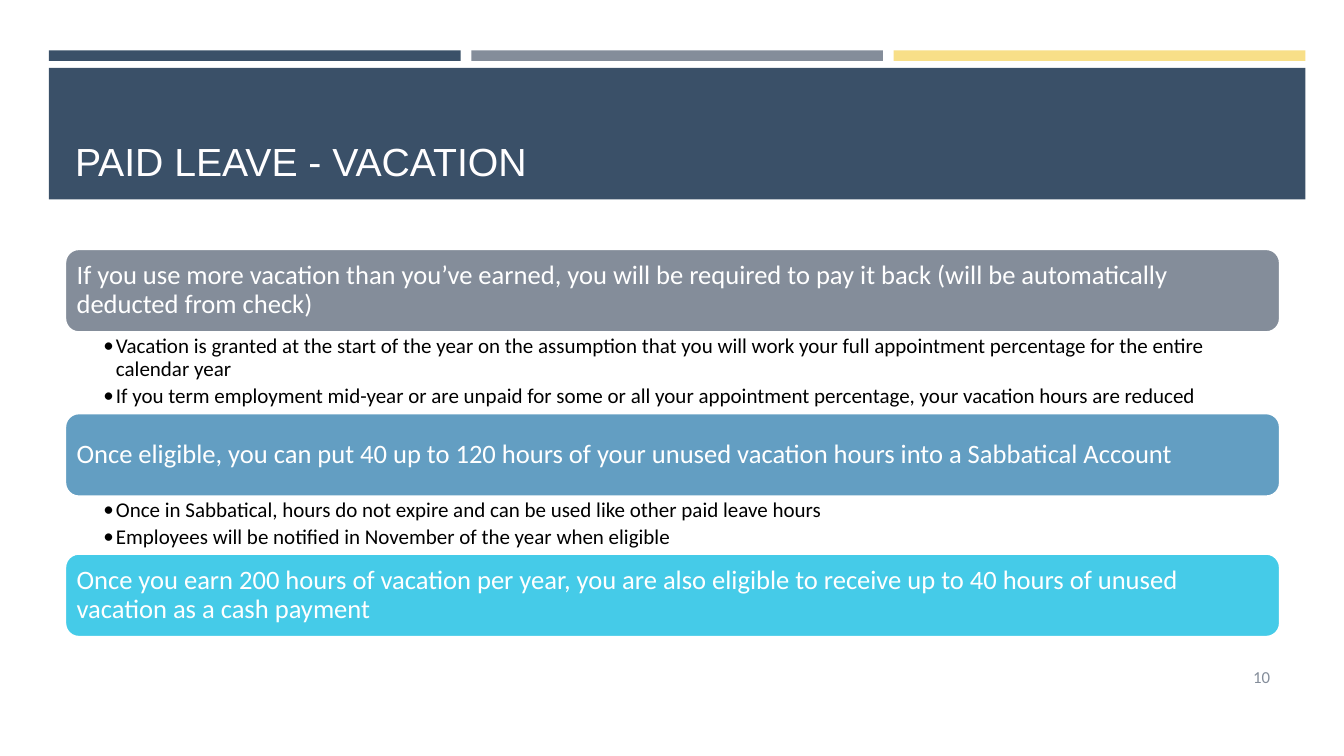
"""Build the paid leave vacation slide."""
from pptx import Presentation
from pptx.dml.color import RGBColor
from pptx.enum.shapes import MSO_SHAPE as SHAPE
from pptx.enum.text import MSO_ANCHOR as ANCHOR, MSO_AUTO_SIZE as AUTO, PP_ALIGN as ALIGN
from pptx.oxml.ns import qn
from pptx.util import Pt
from lxml.etree import SubElement


def rgb(color):
    return RGBColor.from_string(color)


def write(sp, *texts, size, color, font="Calibri", align=ALIGN.LEFT, anchor=ANCHOR.MIDDLE,
          insets=(7.2, 3.6, 7.2, 3.6), spacing=1.0, after=0, bullet=None):
    tf = sp.text_frame
    tf.word_wrap = True
    tf.auto_size = AUTO.NONE
    tf.vertical_anchor = anchor
    tf.margin_left, tf.margin_top, tf.margin_right, tf.margin_bottom = map(Pt, insets)
    for i, text in enumerate(texts):
        p = tf.add_paragraph() if i else tf.paragraphs[0]
        p.alignment = align
        p.line_spacing = spacing
        p.space_before = Pt(0)
        p.space_after = Pt(after)
        if bullet:
            pPr = p._p.get_or_add_pPr()
            pPr.set("marL", str(Pt(9)))
            pPr.set("indent", str(Pt(-9)))
            SubElement(pPr, qn("a:buFont")).set("typeface", "Calibri")
            SubElement(pPr, qn("a:buChar")).set("char", bullet)
        r = p.add_run()
        r.text = text
        r.font.name = font
        r.font.size = Pt(size)
        r.font.color.rgb = rgb(color)


prs = Presentation()
prs.slide_width, prs.slide_height = Pt(960), Pt(540)
s = prs.slides.add_slide(prs.slide_layouts.get_by_name("Two Content"))
title, *bodies = s.placeholders

bars = [(35 + 301.7 * i, 36, 294, 7.5, color)
        for i, color in enumerate(["3A5068", "848D9A", "F8DF88"])]
for x, y, w, h, color in bars + [(35, 48.5, 897.5, 94, "3A5068")]:
    sp = s.shapes.add_shape(SHAPE.RECTANGLE, Pt(x), Pt(y), Pt(w), Pt(h))
    sp.shadow.inherit = False
    sp.fill.solid()
    sp.fill.fore_color.rgb = rgb(color)
    sp.line.fill.background()

left, width = 46.4, 868
title.left, title.top, title.width, title.height = Pt(left), Pt(55.4), Pt(width), Pt(80)
write(title, "PAID LEAVE - VACATION", size=28, color="FFFEFF", font="Arial", anchor=ANCHOR.BOTTOM)
s.shapes.element.append(title.element)

sections = [
    ("848D9A", "If you use more vacation than you’ve earned, you will be required to pay it back "
     "(will be automatically deducted from check)", 57.6,
     ["Vacation is granted at the start of the year on the assumption that you will work your "
      "full appointment percentage for the entire calendar year",
      "If you term employment mid-year or are unpaid for some or all your appointment "
      "percentage, your vacation hours are reduced"]),
    ("639EC2", "Once eligible, you can put 40 up to 120 hours of your unused vacation hours "
     "into a Sabbatical Account", 40.6,
     ["Once in Sabbatical, hours do not expire and can be used like other paid leave hours",
      "Employees will be notified in November of the year when eligible"]),
    ("45CBE8", "Once you earn 200 hours of vacation per year, you are also eligible to receive "
     "up to 40 hours of unused vacation as a cash payment", 0, []),
]
y, card_h = 177.8, 59.7
for color, heading, list_h, items in sections:
    sp = s.shapes.add_shape(SHAPE.ROUNDED_RECTANGLE, Pt(left), Pt(y), Pt(width), Pt(card_h))
    sp.shadow.inherit = False
    sp.fill.solid()
    sp.fill.fore_color.rgb = rgb(color)
    sp.line.color.rgb = rgb("FFFFFF")
    sp.line.width = Pt(1.75)
    write(sp, heading, size=19, color="FFFFFF", insets=(5.4,) * 4, spacing=0.9)
    y += card_h
    if items:
        body = bodies.pop(0)
        body.left, body.top, body.width, body.height = Pt(left), Pt(y), Pt(width), Pt(list_h)
        write(body, *items, size=15, color="000000", anchor=ANCHOR.TOP,
              insets=(27.4, 2, 10.8, 2), spacing=0.9, after=3, bullet="•")
        y += list_h

sp = s.shapes.add_textbox(Pt(831.6), Pt(468.7), Pt(82.8), Pt(28.8))
write(sp, "10", size=12, color="848D9A", align=ALIGN.RIGHT, after=6)

prs.save("out.pptx")
